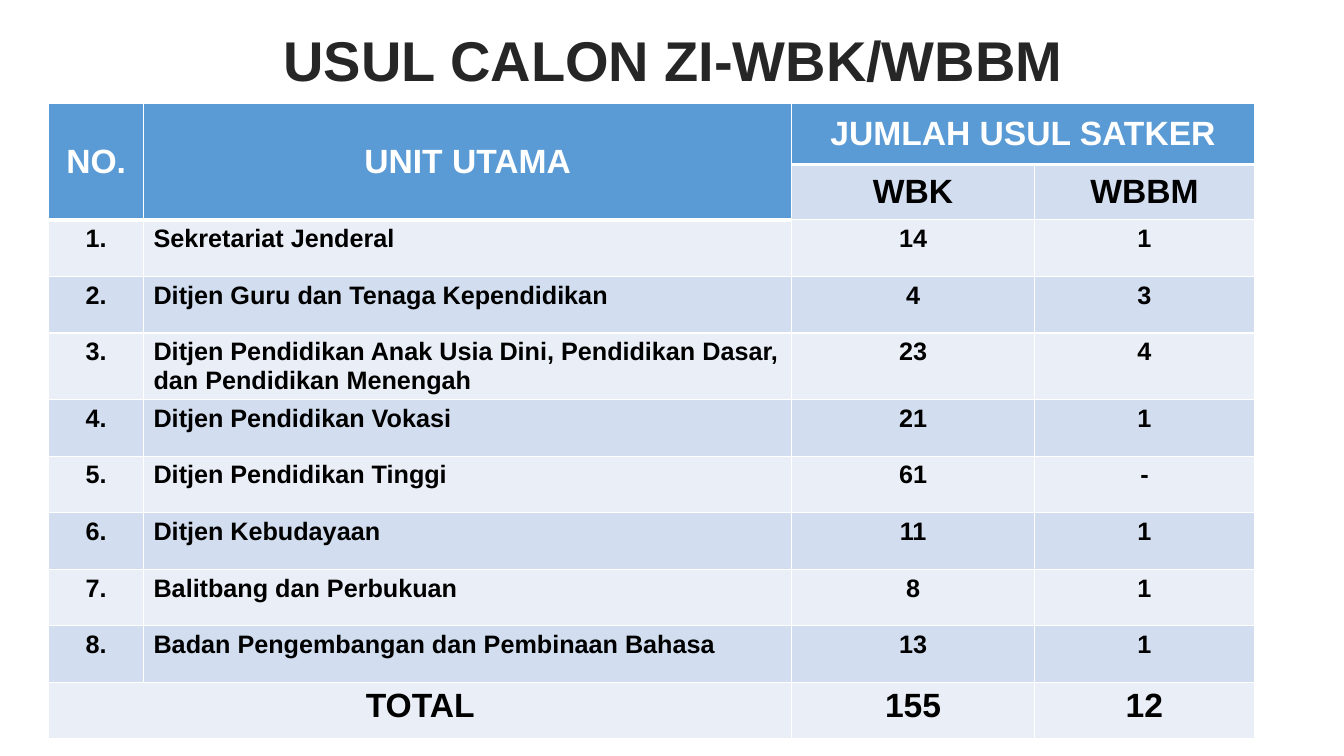
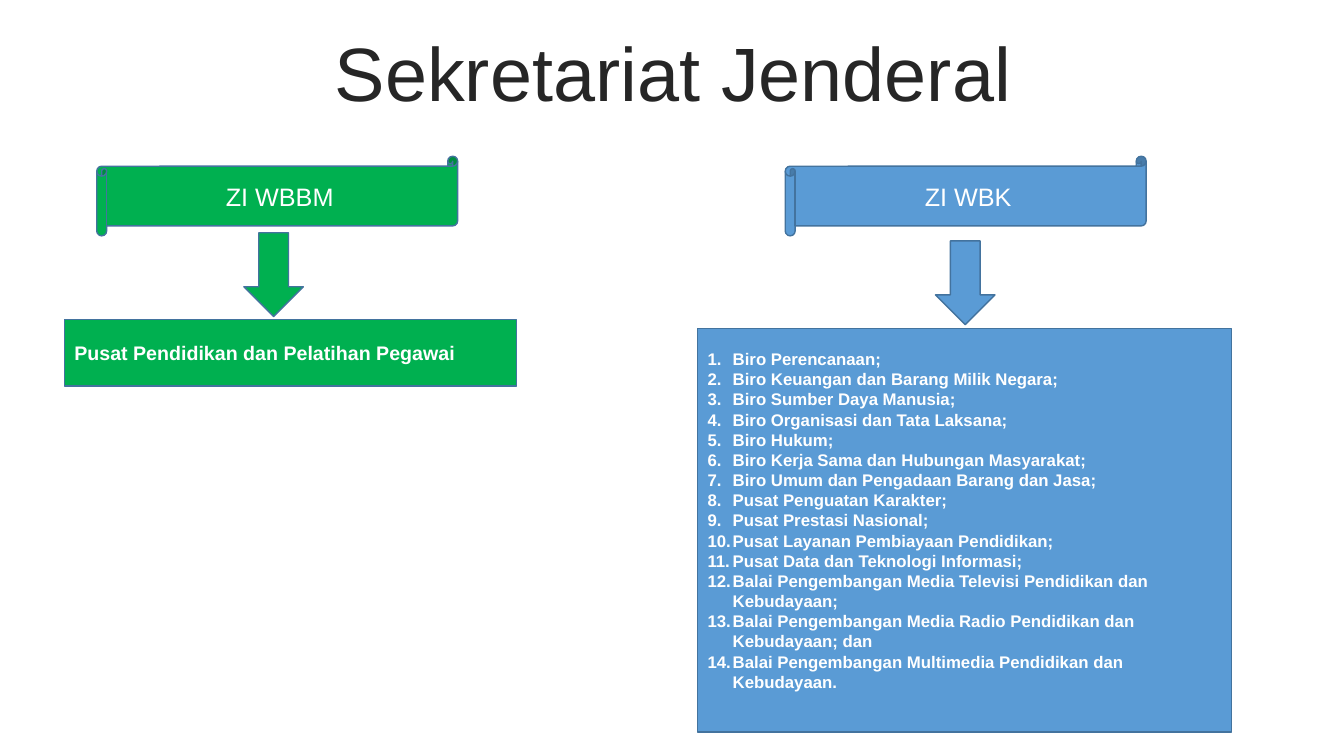
from dataclasses import dataclass

from lxml import etree
from pptx import Presentation
from pptx.dml.color import RGBColor
from pptx.enum import shapes, text
from pptx.oxml import ns
from pptx.util import Pt


@dataclass(frozen=True)
class Theme:
    font: str = "Arial"
    white: str = "FFFFFF"
    black: str = "000000"
    title: str = "262626"
    blue: str = "5A9BD5"
    green: str = "00B050"
    outline: str = "43739E"
    band_dark: str = "D2DEEF"
    band_light: str = "EAEFF7"
    table_title_size: int = 40
    unit_title_size: int = 54
    header_size: int = 24
    body_size: int = 18
    office_size: int = 14
    list_size: int = 12


theme = Theme()
CENTER, LEFT = text.PP_ALIGN.CENTER, text.PP_ALIGN.LEFT
MIDDLE, TOP = text.MSO_ANCHOR.MIDDLE, text.MSO_ANCHOR.TOP


def write(frame, content, size, color=theme.white, bold=False, align=CENTER,
          anchor=MIDDLE, spacing=1.0, before=0, numbered=False):
    frame.word_wrap = True
    frame.vertical_anchor = anchor
    frame.text = content
    for para in frame.paragraphs:
        para.alignment = align
        para.line_spacing = spacing
        para.space_before = Pt(before)
        for span in para.runs:
            span.font.name = theme.font
            span.font.size = Pt(size)
            span.font.bold = bold
            span.font.color.rgb = RGBColor.from_string(color)
        if numbered:
            props = para._p.get_or_add_pPr()
            props.set("marL", str(Pt(18)))
            props.set("indent", str(-Pt(18)))
            etree.SubElement(props, ns.qn("a:buAutoNum"), type="arabicPeriod")


def place(box, left, top, width, height, fill=None):
    box.left, box.top, box.width, box.height = map(Pt, (left, top, width, height))
    if fill:
        box.fill.solid()
        box.fill.fore_color.rgb = RGBColor.from_string(fill)
        box.line.color.rgb = RGBColor.from_string(theme.outline)
        box.line.width = Pt(1)


deck = Presentation()
deck.slide_width, deck.slide_height = Pt(960), Pt(540)
list_layout, title_layout = deck.slide_layouts[1], deck.slide_layouts[5]

pages = []
for layout, heading, top, size, bold in (
    (title_layout, "USUL CALON ZI-WBK/WBBM", 16.5, theme.table_title_size, True),
    (list_layout, "Sekretariat Jenderal", 26.5, theme.unit_title_size, False),
):
    page = deck.slides.add_slide(layout)
    title = page.shapes.title
    place(title, 25, top, 911.5, 57)
    write(title.text_frame, heading, size, theme.title, bold, spacing=0.9, before=10)
    title.text_frame.auto_size = text.MSO_AUTO_SIZE.NONE
    pages.append(page)
table_page, unit_page = pages

units = [
    ("Sekretariat Jenderal", "14", "1"),
    ("Ditjen Guru dan Tenaga Kependidikan", "4", "3"),
    ("Ditjen Pendidikan Anak Usia Dini, Pendidikan Dasar, dan Pendidikan Menengah",
     "23", "4"),
    ("Ditjen Pendidikan Vokasi", "21", "1"),
    ("Ditjen Pendidikan Tinggi", "61", "-"),
    ("Ditjen Kebudayaan", "11", "1"),
    ("Balitbang dan Perbukuan", "8", "1"),
    ("Badan Pengembangan dan Pembinaan Bahasa", "13", "1"),
]
rows = [("NO.", "UNIT UTAMA", "JUMLAH USUL SATKER", ""), ("", "", "WBK", "WBBM")]
rows += [(f"{number}.", *unit) for number, unit in enumerate(units, 1)]
rows.append(("TOTAL", "", "155", "12"))
total_row = len(rows) - 1
widths = [67.7, 463, 173.5, 157]
heights = [43.9, 39.6] + [40.4] * (len(rows) - 2)
header_cells = {(0, 0), (0, 1), (0, 2), (0, 3), (1, 0), (1, 1)}

table = table_page.shapes.add_table(
    len(rows), len(widths), Pt(34.8), Pt(73.6), Pt(sum(widths)), Pt(sum(heights))
).table
for column, width in zip(table.columns, widths):
    column.width = Pt(width)
for row, height in zip(table.rows, heights):
    row.height = Pt(height)

for r, values in enumerate(rows):
    for c, value in enumerate(values):
        cell = table.cell(r, c)
        is_header = (r, c) in header_cells
        is_unit = 2 <= r < total_row
        borders = {
            "lnL": 1,
            "lnR": 1,
            "lnT": 3 if (r - 1, c) in header_cells else 1,
            "lnB": 3 if is_header else 1,
        }
        props = cell._tc.get_or_add_tcPr()
        for tag, weight in borders.items():
            line = etree.SubElement(props, ns.qn(f"a:{tag}"), w=str(Pt(weight)))
            fill = etree.SubElement(line, ns.qn("a:solidFill"))
            etree.SubElement(fill, ns.qn("a:srgbClr"), val=theme.white)
        band = theme.band_dark if r % 2 else theme.band_light
        cell.fill.solid()
        cell.fill.fore_color.rgb = RGBColor.from_string(theme.blue if is_header else band)
        if value:
            write(cell.text_frame, value,
                  theme.body_size if is_unit else theme.header_size,
                  theme.white if is_header else theme.black, bold=True,
                  align=LEFT if is_unit and c == 1 else CENTER)
        cell.vertical_anchor = MIDDLE if r < 2 else TOP

for first, last in (((0, 0), (1, 0)), ((0, 1), (1, 1)), ((0, 2), (0, 3)),
                    ((total_row, 0), (total_row, 1))):
    table.cell(*first).merge(table.cell(*last))

scroll, arrow, rect = (shapes.MSO_SHAPE.HORIZONTAL_SCROLL,
                       shapes.MSO_SHAPE.DOWN_ARROW, shapes.MSO_SHAPE.RECTANGLE)
for kind, bounds, color, label, style in (
    (scroll, (69.1, 111.6, 257.8, 56.9), theme.green, "ZI WBBM",
     {"size": theme.body_size}),
    (arrow, (174.2, 166.3, 42.5, 59.8), theme.green, "", None),
    (rect, (46, 228.4, 322.8, 47.5), theme.green,
     "Pusat Pendidikan dan Pelatihan Pegawai",
     {"size": theme.office_size, "bold": True, "align": LEFT}),
    (scroll, (560.9, 111.6, 257.8, 56.9), theme.blue, "ZI WBK",
     {"size": theme.body_size}),
    (arrow, (668.2, 172.1, 42.5, 59.8), theme.blue, "", None),
):
    box = unit_page.shapes.add_shape(kind, *map(Pt, bounds))
    box.shadow.inherit = False
    place(box, *bounds, fill=color)
    if label:
        write(box.text_frame, label, **style)

offices = [
    "Biro Perencanaan;",
    "Biro Keuangan dan Barang Milik Negara;",
    "Biro Sumber Daya Manusia;",
    "Biro Organisasi dan Tata Laksana;",
    "Biro Hukum;",
    "Biro Kerja Sama dan Hubungan Masyarakat;",
    "Biro Umum dan Pengadaan Barang dan Jasa;",
    "Pusat Penguatan Karakter;",
    "Pusat Prestasi Nasional;",
    "Pusat Layanan Pembiayaan Pendidikan;",
    "Pusat Data dan Teknologi Informasi;",
    "Balai Pengembangan Media Televisi Pendidikan dan Kebudayaan;",
    "Balai Pengembangan Media Radio Pendidikan dan Kebudayaan; dan",
    "Balai Pengembangan Multimedia Pendidikan dan Kebudayaan.",
]
office_list = unit_page.placeholders[1]
place(office_list, 498.2, 234.8, 381.6, 288, fill=theme.blue)
write(office_list.text_frame, "\n".join(offices), theme.list_size, bold=True,
      align=LEFT, numbered=True)
office_list.text_frame.auto_size = text.MSO_AUTO_SIZE.NONE
office_list.text_frame.margin_bottom = Pt(18)

deck.save("out.pptx")
